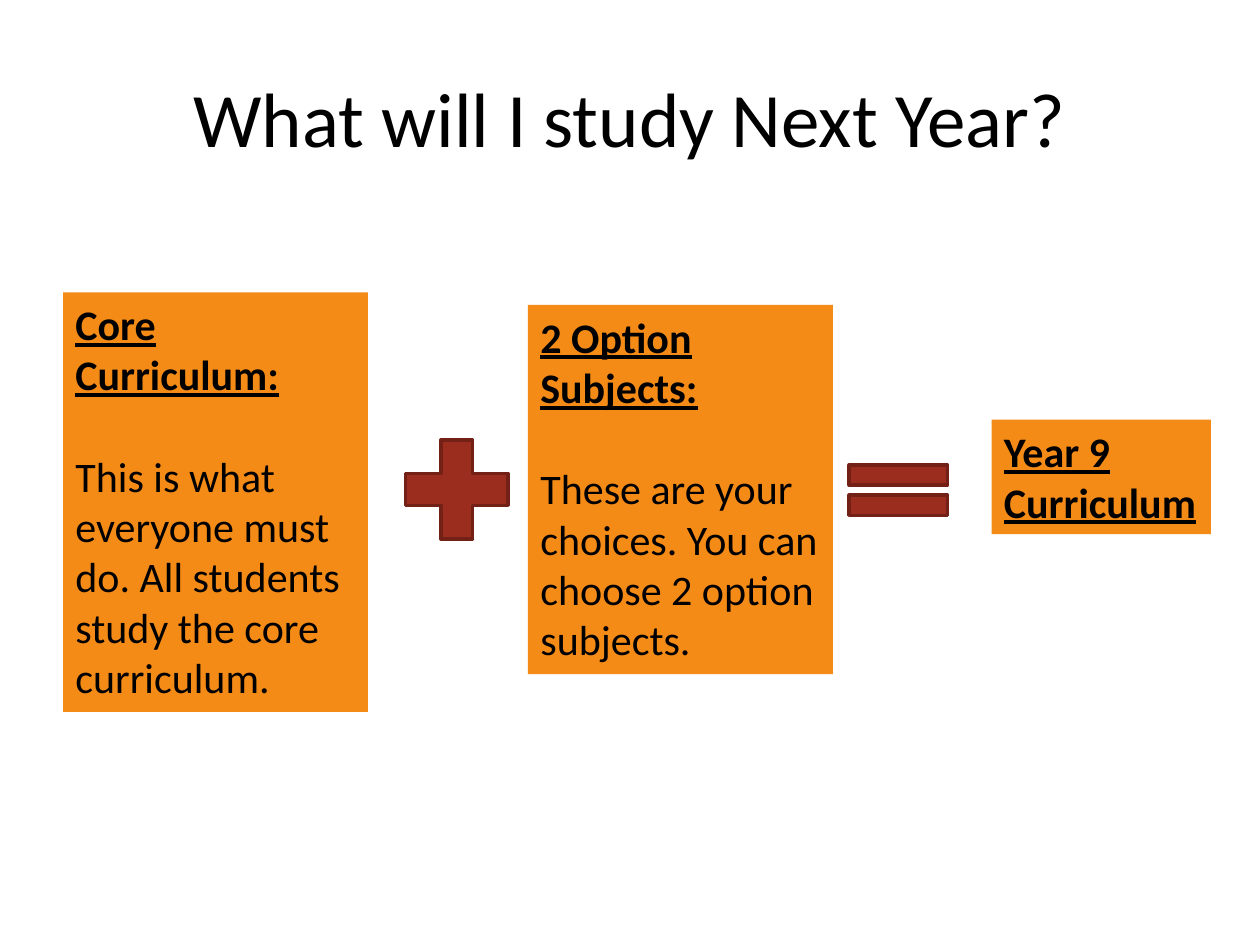
from pptx import Presentation
from pptx.dml.color import RGBColor
from pptx.enum import shapes, text
from pptx.util import Inches, Pt

BLACK, ORANGE, RED, MAROON = "000000", "F58B17", "9B2D1F", "732117"
KIND = shapes.MSO_SHAPE


def color(code):
    return RGBColor.from_string(code)


def write(para, words, size=24, bold=False, line=False,
          align=text.PP_ALIGN.LEFT, before=0):
    para.alignment = align
    para.space_before = Pt(before)
    run = para.add_run()
    run.text = words
    font = run.font
    font.name, font.size = "Calibri", Pt(size)
    font.bold, font.underline = bold, line
    font.color.rgb = color(BLACK)


def place(slide, kind, box, fill):
    shape = slide.shapes.add_shape(kind, *map(Inches, box))
    shape.shadow.inherit = False
    shape.fill.solid()
    shape.fill.fore_color.rgb = color(fill)
    return shape


def title(slide, box, words):
    frame = slide.shapes.add_textbox(*map(Inches, box)).text_frame
    frame.word_wrap = True
    frame.vertical_anchor = text.MSO_ANCHOR.MIDDLE
    write(frame.paragraphs[0], words, size=44, align=text.PP_ALIGN.CENTER)


def card(slide, box, head, body=None):
    shape = place(slide, KIND.RECTANGLE, box, ORANGE)
    shape.line.fill.background()
    frame = shape.text_frame
    frame.word_wrap = True
    frame.vertical_anchor = text.MSO_ANCHOR.TOP
    frame.auto_size = text.MSO_AUTO_SIZE.SHAPE_TO_FIT_TEXT
    write(frame.paragraphs[0], head, bold=True, line=True)
    if body:
        write(frame.add_paragraph(), body, before=29)


def sign(slide, box, kind):
    shape = place(slide, kind, box, RED)
    shape.line.color.rgb = color(MAROON)
    shape.line.width = Pt(2)


def main():
    deck = Presentation()
    deck.slide_width, deck.slide_height = Inches(10), Inches(7.5)
    slide = deck.slides.add_slide(deck.slide_layouts[6])
    title(slide, (0.5, 0.3, 9, 1.25), "What will I study Next Year?")
    card(slide, (0.5, 2.32, 2.42, 3.33), "Core Curriculum:",
         "This is what everyone must do. All students study the core curriculum.")
    sign(slide, (3.07, 3.35, 1.11, 1.07), KIND.MATH_PLUS)
    card(slide, (4.19, 2.42, 2.42, 2.93), "2 Option Subjects:",
         "These are your choices. You can choose 2 option subjects.")
    sign(slide, (6.6, 3.55, 1.06, 0.68), KIND.MATH_EQUAL)
    card(slide, (7.87, 3.33, 1.74, 0.91), "Year 9 Curriculum")
    deck.save("out.pptx")


if __name__ == "__main__":
    main()
